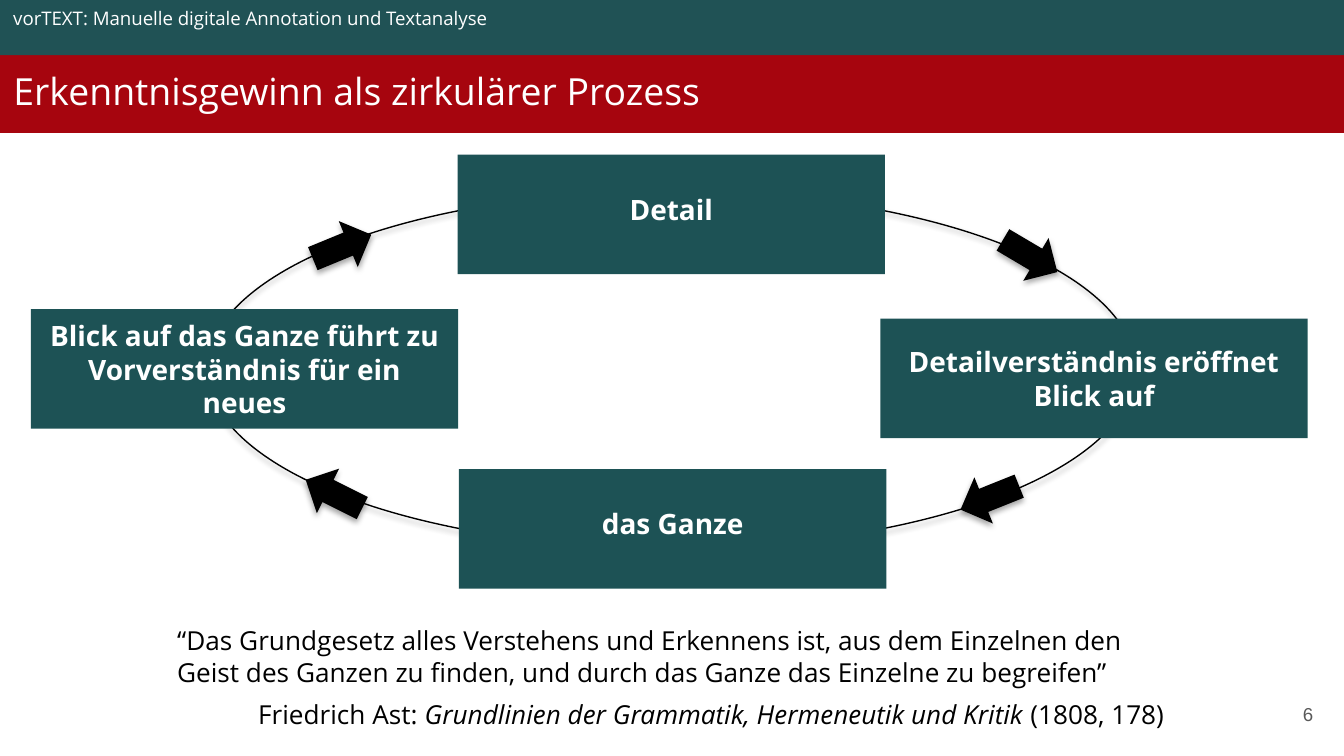
"""Builds a slide on gaining knowledge as a circular process."""
import dataclasses

import lxml.etree
import pptx
import pptx.dml.color
import pptx.enum.shapes
import pptx.enum.text
import pptx.oxml.ns
import pptx.util

SHAPE = pptx.enum.shapes.MSO_SHAPE
ANCHOR = pptx.enum.text.MSO_ANCHOR
ALIGN = pptx.enum.text.PP_ALIGN


@dataclasses.dataclass(frozen=True)
class Theme:
    font: str = "Open Sans"
    number_font: str = "Arial"
    band: str = "205255"
    box: str = "1D5255"
    title: str = "A6050E"
    light: str = "FFFFFF"
    dark: str = "000000"
    grey: str = "595959"
    title_size: int = 20
    box_size: int = 15
    quote_size: int = 14
    small_size: int = 10


THEME = Theme()
COLUMNS, ROWS = 100, 56.25
CELL = pptx.util.Inches(0.1)

HEADER = "vorTEXT: Manuelle digitale Annotation und Textanalyse"
TITLE = "Erkenntnisgewinn als zirkulärer Prozess"
NUMBER = "6"
QUOTE = ("“Das Grundgesetz alles Verstehens und Erkennens ist, aus dem Einzelnen den "
         "Geist des Ganzen zu finden, und durch das Ganze das Einzelne zu begreifen”")
SOURCE = [("Friedrich Ast: ", False),
          ("Grundlinien der Grammatik, Hermeneutik und Kritik", True),
          (" (1808, 178)", False)]

HEADER_ROWS, TITLE_ROWS = 4.1, 5.8
CYCLE_AREA = (15.4, 14.2, 69.1, 26.6)
BOX_SIZE, ARROW_SIZE = (31.8, 8.9), (3.7, 4.7)
STATIONS = [
    ("Detail", (49.95, 15.95), 1.3),
    ("Detailverständnis eröffnet Blick auf", (81.4, 28.15), 0.5),
    ("das Ganze", (50.05, 39.35), 1.3),
    ("Blick auf das Ganze führt zu Vorverständnis für ein neues", (18.2, 27.45), 0.5),
]
ARROWS = [((76.65, 19.05), 300.6), ((73.65, 37.05), 68.2),
          ((24.85, 36.75), 116.6), ((25.45, 18.35), 247.6)]


def rgb(value):
    return pptx.dml.color.RGBColor.from_string(value)


def grid(*cells):
    return [round(cell * CELL) for cell in cells]


def centred(centre, size):
    return (centre[0] - size[0] / 2, centre[1] - size[1] / 2, *size)


def add_shape(page, kind, area, fill=None):
    shape = page.shapes.add_shape(kind, *grid(*area))
    shape.shadow.inherit = False
    shape.line.fill.background()
    if fill:
        shape.fill.solid()
        shape.fill.fore_color.rgb = rgb(fill)
    else:
        shape.fill.background()
    return shape


def cast_shadow(shape):
    qn = pptx.oxml.ns.qn
    effects = shape._element.spPr.find(qn("a:effectLst"))
    shadow = lxml.etree.SubElement(effects, qn("a:outerShdw"), blurRad="39400",
                                   dist="22900", dir="5400000", rotWithShape="0")
    color = lxml.etree.SubElement(shadow, qn("a:srgbClr"), val=THEME.dark)
    lxml.etree.SubElement(color, qn("a:alpha"), val="35000")


def set_frame(shape, anchor, margins=(1, 0.5, 1, 0.5)):
    frame = shape.text_frame
    frame.word_wrap = True
    frame.auto_size = pptx.enum.text.MSO_AUTO_SIZE.NONE
    frame.vertical_anchor = anchor
    (frame.margin_left, frame.margin_top,
     frame.margin_right, frame.margin_bottom) = grid(*margins)
    return frame


def style(para, size, color, align=ALIGN.LEFT, bold=False, font=THEME.font):
    para.alignment = align
    for span in para.runs:
        span.font.name = font
        span.font.size = pptx.util.Pt(size)
        span.font.bold = bold
        span.font.color.rgb = rgb(color)


def add_title(page):
    title = page.shapes.title
    title.left, title.top, title.width, title.height = grid(0, HEADER_ROWS, COLUMNS, TITLE_ROWS)
    title.fill.solid()
    title.fill.fore_color.rgb = rgb(THEME.title)
    frame = set_frame(title, ANCHOR.TOP, (1, 1, 1, 1))
    frame.text = TITLE
    style(frame.paragraphs[0], THEME.title_size, THEME.light)


def add_text(page, area, text, size, color, anchor=ANCHOR.TOP, **options):
    frame = set_frame(page.shapes.add_textbox(*grid(*area)), anchor)
    frame.text = text
    style(frame.paragraphs[0], size, color, **options)
    return frame


def add_cycle(page):
    ring = add_shape(page, SHAPE.OVAL, CYCLE_AREA)
    ring.line.color.rgb = rgb(THEME.dark)
    ring.line.width = pptx.util.Pt(0.75)
    cast_shadow(ring)
    for text, centre, bottom in STATIONS:
        box = add_shape(page, SHAPE.RECTANGLE, centred(centre, BOX_SIZE), THEME.box)
        frame = set_frame(box, ANCHOR.MIDDLE, (1, 0.5, 1, bottom))
        frame.text = text
        style(frame.paragraphs[0], THEME.box_size, THEME.light, ALIGN.CENTER, bold=True)
    for centre, angle in ARROWS:
        arrow = add_shape(page, SHAPE.DOWN_ARROW, centred(centre, ARROW_SIZE), THEME.dark)
        arrow.rotation = angle
        cast_shadow(arrow)


def add_quote(page):
    frame = add_text(page, (12.2, 46, 75.4, 8.9), QUOTE, THEME.quote_size, THEME.dark)
    para = frame.add_paragraph()
    para.space_before = pptx.util.Pt(6)
    for text, italic in SOURCE:
        span = para.add_run()
        span.text = text
        span.font.italic = italic
    style(para, THEME.quote_size, THEME.dark, ALIGN.RIGHT)


def main():
    deck = pptx.Presentation()
    deck.slide_width, deck.slide_height = grid(COLUMNS, ROWS)
    page = deck.slides.add_slide(deck.slide_layouts.get_by_name("Title Only"))
    add_title(page)
    add_text(page, (92.7, 51, 6, 4.3), NUMBER, THEME.small_size, THEME.grey,
             ANCHOR.MIDDLE, align=ALIGN.RIGHT, font=THEME.number_font)
    add_shape(page, SHAPE.RECTANGLE, (0, 0, COLUMNS, HEADER_ROWS), THEME.band)
    add_cycle(page)
    add_quote(page)
    add_text(page, (0, 0, 69.9, 2.7), HEADER, THEME.small_size, THEME.light)
    deck.save("out.pptx")


if __name__ == "__main__":
    main()
